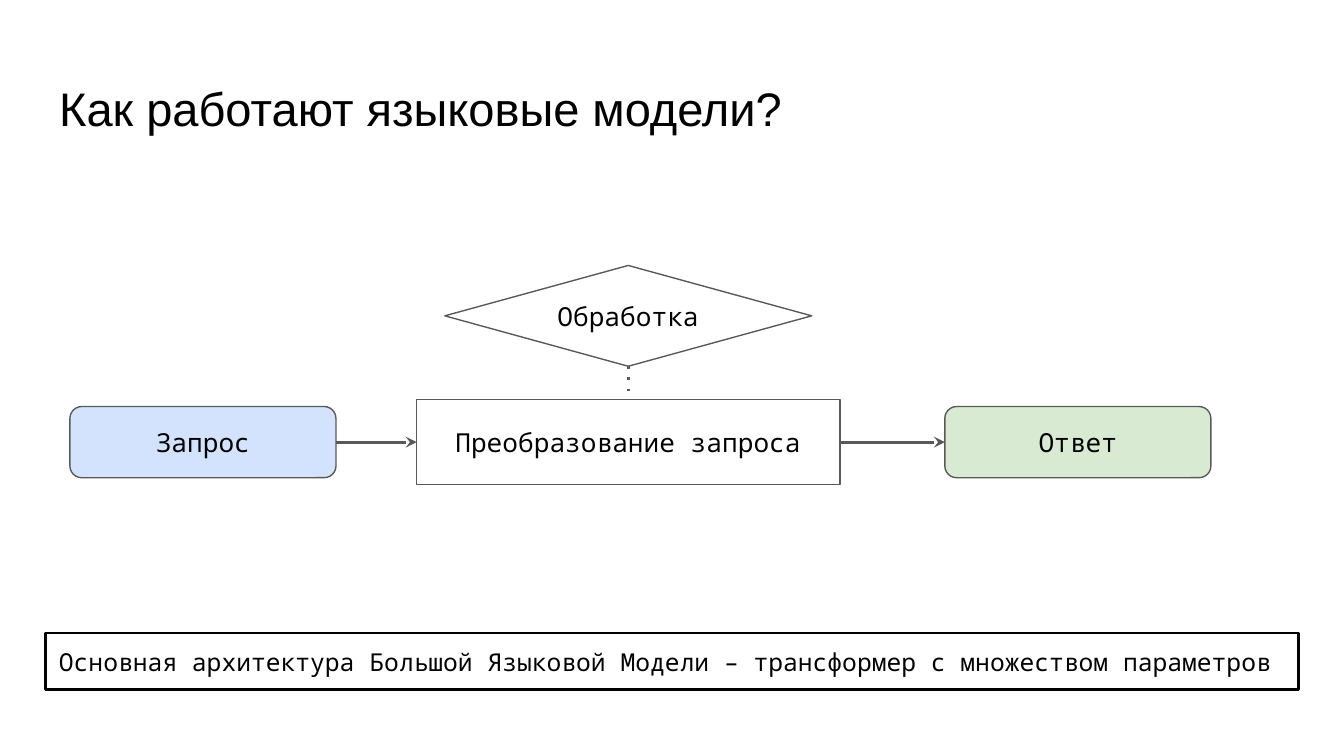
"""Builds a slide that shows how a language model turns a query into an answer."""
from lxml import etree
from pptx import Presentation
from pptx.dml.color import RGBColor
from pptx.enum.shapes import MSO_CONNECTOR, MSO_SHAPE
from pptx.enum.text import MSO_ANCHOR, MSO_AUTO_SIZE, PP_ALIGN
from pptx.oxml.ns import qn
from pptx.util import Inches, Pt

RECT, ROUND = MSO_SHAPE.RECTANGLE, MSO_SHAPE.ROUNDED_RECTANGLE
DIAMOND = MSO_SHAPE.FLOWCHART_DECISION
STRAIGHT = MSO_CONNECTOR.STRAIGHT
LEFT, CENTER = PP_ALIGN.LEFT, PP_ALIGN.CENTER
TOP, MIDDLE = MSO_ANCHOR.TOP, MSO_ANCHOR.MIDDLE
FIXED, GROW = MSO_AUTO_SIZE.NONE, MSO_AUTO_SIZE.SHAPE_TO_FIT_TEXT
UP, WEST, DOWN, EAST = range(4)

SANS, MONO = "Arial", "Noto Sans Mono"
BLACK, GRAY, WHITE = "000000", "595959", "FFFFFF"
PAGE = 10
MARGIN, WIDE = 0.34, 9.32
ROW = 3.29
ARROW = ("a:tailEnd", {"type": "stealth"})
DOTS = ("a:prstDash", {"val": "dot"})

TITLE = "Как работают языковые модели?"
NOTE = "Основная архитектура Большой Языковой Модели – трансформер с множеством параметров"
STEPS = {
    "query": ("Запрос", ROUND, 0.52, ROW, 1.98, 0.53, "D3E3FD"),
    "change": ("Преобразование запроса", RECT, 3.1, ROW, 3.15, 0.63, WHITE),
    "process": ("Обработка", DIAMOND, 3.31, 2.35, 2.73, 0.75, WHITE),
    "answer": ("Ответ", ROUND, 7.03, ROW, 1.98, 0.53, "D9EAD3"),
}
LINKS = [
    ("query", EAST, "change", WEST, ARROW),
    ("change", EAST, "answer", WEST, ARROW),
    ("process", DOWN, "change", UP, DOTS),
]


def color(code):
    return RGBColor.from_string(code)


def write(shape, text, font=MONO, size=14, align=CENTER, anchor=MIDDLE, fit=FIXED):
    frame = shape.text_frame
    frame.word_wrap, frame.auto_size = True, fit
    frame.vertical_anchor = anchor
    frame.margin_left = frame.margin_right = Inches(0.1)
    frame.margin_top = frame.margin_bottom = Inches(0.1)
    para = frame.paragraphs[0]
    para.alignment = align
    run = para.add_run()
    run.text = text
    run.font.name, run.font.size = font, Pt(size)
    run.font.color.rgb = color(BLACK)


def stroke(item, code, width):
    item.line.color.rgb = color(code)
    item.line.width = Pt(width)


def draw(slide, kind, box, fill=None, line=GRAY, width=0.75):
    shape = slide.shapes.add_shape(kind, *map(Inches, box))
    shape.shadow.inherit = False
    if fill:
        shape.fill.solid()
        shape.fill.fore_color.rgb = color(fill)
    else:
        shape.fill.background()
    stroke(shape, line, width)
    return shape


def link(slide, start, out, end, into, style):
    wire = slide.shapes.add_connector(STRAIGHT, 0, 0, 0, 0)
    wire.begin_connect(start, out)
    wire.end_connect(end, into)
    stroke(wire, GRAY, 1.5)
    tag, attrs = style
    props = wire._element.spPr
    etree.SubElement(props.find(qn("a:ln")), qn(tag), attrs)
    etree.SubElement(props, qn("a:effectLst"))


def main():
    deck = Presentation()
    deck.slide_width, deck.slide_height = Inches(PAGE), Inches(PAGE * 9 / 16)
    slide = deck.slides.add_slide(deck.slide_layouts[5])

    title = slide.shapes.title
    title.left, title.top = Inches(MARGIN), Inches(0.49)
    title.width, title.height = Inches(WIDE), Inches(0.63)
    write(title, TITLE, font=SANS, size=25.2, align=LEFT)

    note = draw(slide, RECT, (MARGIN, 4.71, WIDE, 0.42), line=BLACK, width=1.5)
    write(note, NOTE, size=13.2, align=LEFT, anchor=TOP, fit=GROW)

    nodes = {}
    for name, (text, kind, left, mid, width, height, fill) in STEPS.items():
        box = left, mid - height / 2, width, height
        nodes[name] = draw(slide, kind, box, fill)
        write(nodes[name], text)
    for start, out, end, into, style in LINKS:
        link(slide, nodes[start], out, nodes[end], into, style)

    deck.save("out.pptx")


if __name__ == "__main__":
    main()
